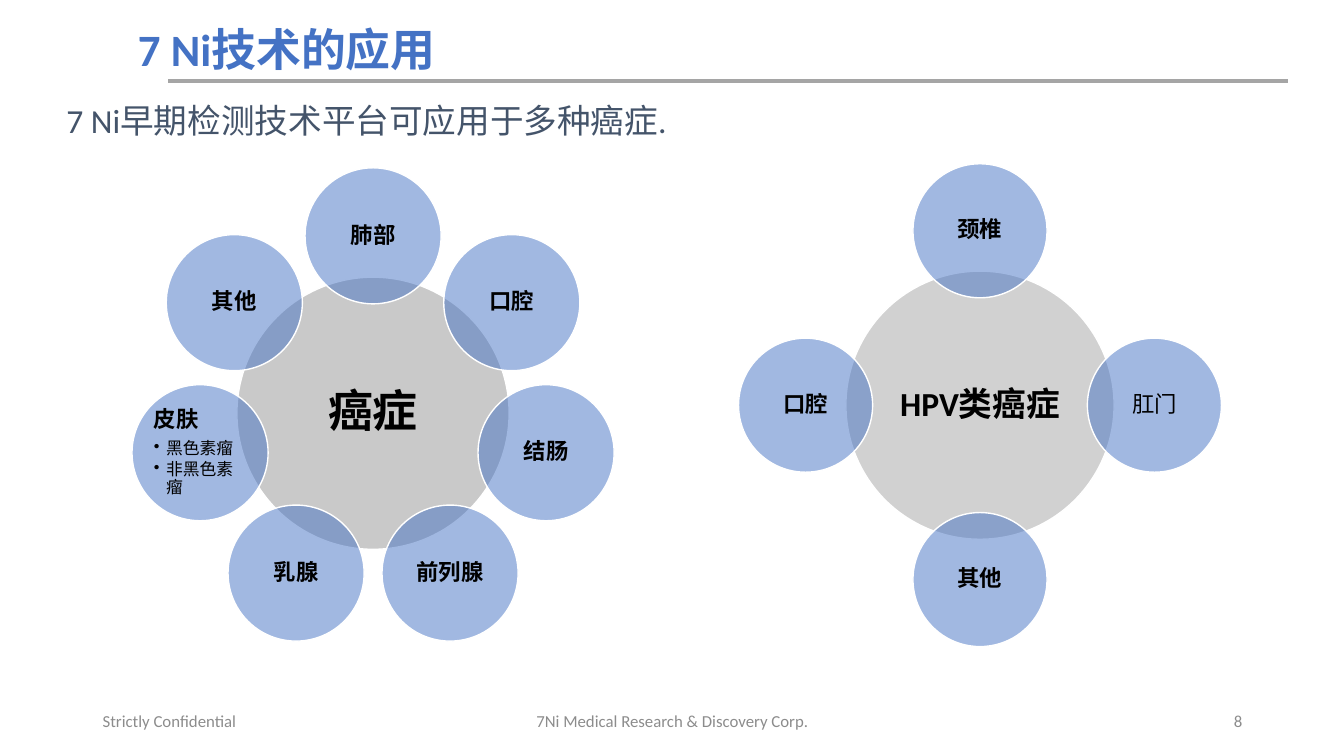
from math import cos, pi, sin

from lxml.etree import SubElement
from pptx import Presentation
from pptx.dml.color import RGBColor
from pptx.enum.shapes import MSO_CONNECTOR, MSO_SHAPE
from pptx.enum.text import MSO_ANCHOR, PP_ALIGN
from pptx.oxml.ns import qn
from pptx.util import Inches, Pt

BLUE = RGBColor(0x44, 0x72, 0xC4)
SLATE = RGBColor(0x44, 0x54, 0x6A)
GRAY = RGBColor(0xA5, 0xA5, 0xA5)
SILVER = RGBColor(0xC9, 0xC9, 0xC9)
MUTED = RGBColor(0x8C, 0x8C, 0x8C)
BLACK = RGBColor(0, 0, 0)
WHITE = RGBColor(0xFF, 0xFF, 0xFF)


def style(para, size, color, bold=False, align=PP_ALIGN.LEFT):
    para.alignment = align
    font = para.font
    font.name = "Calibri"
    font.size = Pt(size)
    font.bold = bold
    font.color.rgb = color


def add_text(slide, box, text, size, color, bold=False,
             align=PP_ALIGN.LEFT, anchor=MSO_ANCHOR.MIDDLE, spacing=1.0):
    frame = slide.shapes.add_textbox(*map(Inches, box)).text_frame
    frame.word_wrap = True
    frame.vertical_anchor = anchor
    para = frame.paragraphs[0]
    para.text = text
    para.line_spacing = spacing
    style(para, size, color, bold, align)


def add_rule(slide, left, right, top):
    rule = slide.shapes.add_connector(
        MSO_CONNECTOR.STRAIGHT, Inches(left), Inches(top), Inches(right), Inches(top))
    rule.line.color.rgb = GRAY
    rule.line.width = Pt(3)
    SubElement(rule._element.spPr, qn("a:effectLst"))


def add_bullet(para):
    props = para._p.get_or_add_pPr()
    props.set("marL", str(Inches(0.12)))
    props.set("indent", str(-Inches(0.12)))
    SubElement(props, qn("a:buChar")).set("char", "•")


def add_circle(slide, x, y, size, fill, label, points, bold=True, clear=True, items=()):
    """Draw a circle centred on x, y, with a label and optional bullets."""
    circle = slide.shapes.add_shape(
        MSO_SHAPE.OVAL, Inches(x - size / 2), Inches(y - size / 2),
        Inches(size), Inches(size))
    circle.shadow.inherit = False
    circle.fill.solid()
    circle.fill.fore_color.rgb = fill
    if clear:
        tint = circle._element.spPr.find(qn("a:solidFill"))[0]
        SubElement(tint, qn("a:alpha")).set("val", "50000")
    circle.line.color.rgb = WHITE
    circle.line.width = Pt(1)

    frame = circle.text_frame
    frame.word_wrap = True
    frame.vertical_anchor = MSO_ANCHOR.MIDDLE
    inset = Inches(0.02)
    frame.margin_left = frame.margin_right = inset
    frame.margin_top = frame.margin_bottom = inset
    head = frame.paragraphs[0]
    head.text = label
    head.line_spacing = 0.9
    head.space_after = Pt(points * 0.35)
    style(head, points, BLACK, bold, PP_ALIGN.LEFT if items else PP_ALIGN.CENTER)
    for item in items:
        para = frame.add_paragraph()
        para.text = item
        para.level = 1
        para.line_spacing = 0.9
        para.space_after = Pt(1.8)
        add_bullet(para)
        style(para, 12, BLACK)


def add_wheel(slide, x, y, reach, hub, petals):
    """Draw a hub circle ringed by half-size petals, clockwise from the top."""
    size, fill, label, points, clear = hub
    add_circle(slide, x, y, size, fill, label, points, clear=clear)
    for i, (name, bold, items) in enumerate(petals):
        turn = 2 * pi * i / len(petals)
        add_circle(slide, x + reach * sin(turn), y - reach * cos(turn),
                   size / 2, BLUE, name, 16, bold, items=items)


def main():
    deck = Presentation()
    deck.slide_width, deck.slide_height = Inches(13.33), Inches(7.5)
    slide = deck.slides.add_slide(deck.slide_layouts[6])

    # Heading
    add_rule(slide, 1.67, 12.77, 0.8)
    add_text(slide, (1.27, 0.24, 11.49, 0.56), "7 Ni技术的应用", 32, BLUE,
             bold=True, spacing=0.9)
    add_text(slide, (0.56, 0.99, 12.2, 1.11), "7 Ni早期检测技术平台可应用于多种癌症.",
             24, SLATE, anchor=MSO_ANCHOR.TOP, spacing=0.9)

    # Cancer wheel
    add_wheel(slide, 3.7, 4.1, 1.76, (2.7, SILVER, "癌症", 32, False), [
        ("肺部", True, ()), ("口腔", True, ()), ("结肠", True, ()),
        ("前列腺", True, ()), ("乳腺", True, ()),
        ("皮肤", True, ("黑色素瘤", "非黑色素瘤")), ("其他", True, ())])

    # HPV wheel
    add_wheel(slide, 9.72, 4.02, 1.73, (2.66, GRAY, "HPV类癌症", 24, True), [
        ("颈椎", True, ()), ("肛门", False, ()), ("其他", True, ()), ("口腔", True, ())])

    # Footer
    for left, width, text, align in (
            (0.92, 3, "Strictly Confidential", PP_ALIGN.LEFT),
            (4.42, 4.5, "7Ni Medical Research & Discovery Corp.", PP_ALIGN.CENTER),
            (9.42, 3, "8", PP_ALIGN.RIGHT)):
        add_text(slide, (left, 6.95, width, 0.4), text, 12, MUTED, align=align)

    deck.save("out.pptx")


if __name__ == "__main__":
    main()
